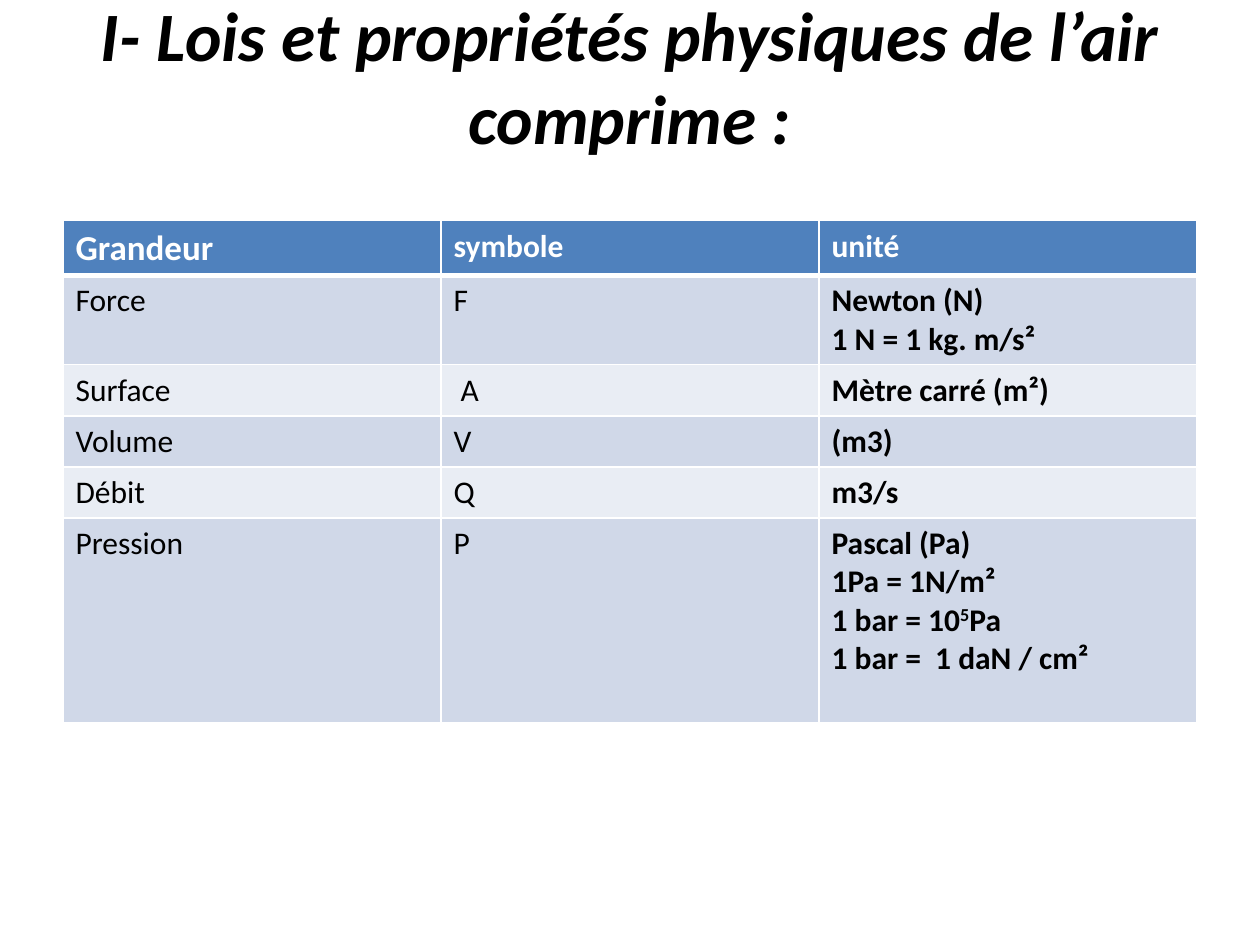
"""Build the slide on the quantities, symbols and units of compressed air."""
from lxml.etree import SubElement
from pptx import Presentation
from pptx.dml.color import RGBColor
from pptx.enum.text import MSO_ANCHOR as Anchor, PP_ALIGN as Align
from pptx.oxml.ns import qn
from pptx.util import Cm, Pt

TITLE = "I- Lois et propriétés physiques de l’air comprime :"
HEADER = ["Grandeur", "symbole", "unité"]
QUANTITIES = [
    ("Force", "F", ["Newton (N)", "1 N = 1 kg. m/s²"]),
    ("Surface", " A", ["Mètre carré (m²)"]),
    ("Volume", "V", ["(m3)"]),
    ("Débit", "Q", ["m3/s"]),
    ("Pression", "P", ["Pascal (Pa)", "1Pa = 1N/m²", "1 bar = 10^5^Pa",
                       "1 bar =  1 daN / cm²"]),
]
ROW_HEIGHTS = [1.09, 1.8, 1.03, 1.03, 1.03, 4.12]
LEFT, WIDTH = 1.27, 22.86
BLACK, WHITE, BLUE = "000000", "FFFFFF", "4F81BD"
BANDS = ["D0D8E8", "E9EDF4"]


def color(value):
    return RGBColor.from_string(value)


def write(para, text, size, ink, bold, italic=False):
    """Add runs to a paragraph; text between carets is superscript."""
    for index, part in enumerate(text.split("^")):
        span = para.add_run()
        span.text = part
        font = span.font
        font.name, font.size = "Calibri", Pt(size)
        font.bold, font.italic = bold, italic
        font.color.rgb = color(ink)
        if index % 2:
            span.font._element.set("baseline", "30000")


def fill_cell(cell, lines, size, ink, bold, fill, borders):
    """Write the lines of a cell, then set its borders and fill."""
    frame = cell.text_frame
    for index, line in enumerate(lines):
        para = frame.add_paragraph() if index else frame.paragraphs[0]
        write(para, line, size, ink, bold)
    properties = cell._tc.get_or_add_tcPr()
    for side, points in borders.items():
        edge = SubElement(properties, qn(f"a:ln{side}"), w=str(Pt(points)))
        solid = SubElement(edge, qn("a:solidFill"))
        SubElement(solid, qn("a:srgbClr"), val=WHITE)
    cell.fill.solid()
    cell.fill.fore_color.rgb = color(fill)


def add_title(page):
    """Add the centred heading."""
    box = page.shapes.add_textbox(Cm(LEFT), Cm(0.76), Cm(WIDTH), Cm(3.18))
    frame = box.text_frame
    frame.word_wrap = True
    frame.vertical_anchor = Anchor.MIDDLE
    frame.margin_bottom = Cm(1.8)
    para = frame.paragraphs[0]
    para.alignment = Align.CENTER
    write(para, TITLE, 39.6, BLACK, True, True)


def add_quantities(page):
    """Add the table with its header and banded rows."""
    rows = [HEADER, *QUANTITIES]
    table = page.shapes.add_table(len(rows), len(HEADER), Cm(LEFT), Cm(4.45),
                                  Cm(WIDTH), Cm(sum(ROW_HEIGHTS))).table
    for row, values in enumerate(rows):
        table.rows[row].height = Cm(ROW_HEIGHTS[row])
        borders = {"L": 1, "R": 1, "T": 3 if row == 1 else 1, "B": 1 if row else 3}
        for column, value in enumerate(values):
            lines = value if isinstance(value, list) else [value]
            size = 20 if row == column == 0 else 18
            ink = BLACK if row else WHITE
            bold = row == 0 or column == 2
            fill = BANDS[(row - 1) % 2] if row else BLUE
            fill_cell(table.cell(row, column), lines, size, ink, bold, fill, borders)


def main():
    deck = Presentation()
    deck.slide_width, deck.slide_height = Cm(25.4), Cm(19.05)
    page = deck.slides.add_slide(deck.slide_layouts[6])
    add_title(page)
    add_quantities(page)
    deck.save("out.pptx")


if __name__ == "__main__":
    main()
